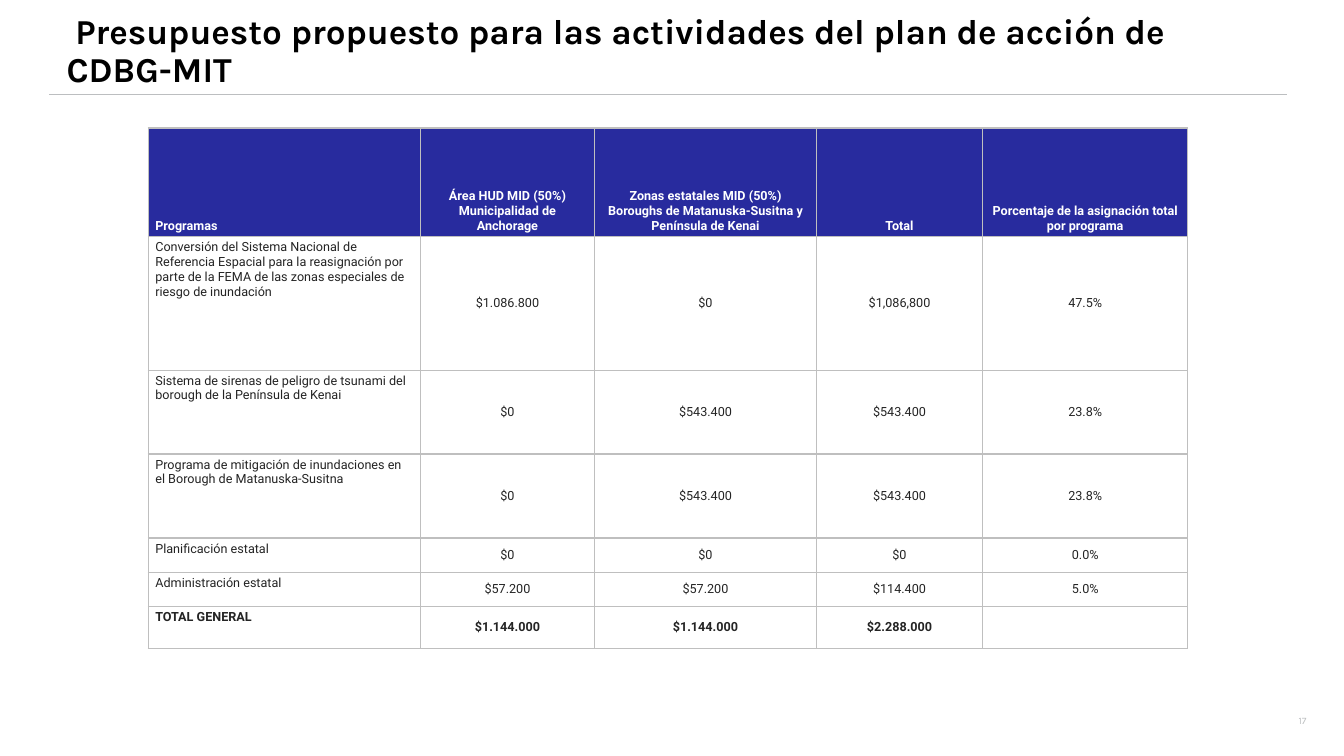
import pptx
import pptx.util
import pptx.dml.color
import pptx.enum.shapes
import pptx.enum.text
import pptx.oxml
from collections import namedtuple
from pptx.oxml.ns import nsdecls

Pt = pptx.util.Pt
Align = pptx.enum.text.PP_ALIGN
Anchor = pptx.enum.text.MSO_ANCHOR
Box = namedtuple("Box", "left top width height")


class Theme:
    head, body = "Karla", "Roboto"
    black, white, ink = "000000", "FFFFFF", "242424"
    navy, rule, edge = "282B9E", "BCBEC0", "BFBFBF"
    title, cell, small = 25, 9, 7


COLS = [194.4, 124.5, 158.4, 118.8, 146.5]
ROWS = [77.6, 95.4, 60, 60, 24.5, 24.5, 30]
DATA = [
    ["Programas", "Área HUD MID (50%) Municipalidad de Anchorage",
     "Zonas estatales MID (50%) Boroughs de Matanuska-Susitna y Península de Kenai",
     "Total", "Porcentaje de la asignación total por programa"],
    ["Conversión del Sistema Nacional de Referencia Espacial para la reasignación "
     "por parte de la FEMA de las zonas especiales de riesgo de inundación",
     "$1.086.800", "$0", "$1,086,800", "47.5%"],
    ["Sistema de sirenas de peligro de tsunami del borough de la Península de Kenai",
     "$0", "$543.400", "$543.400", "23.8%"],
    ["Programa de mitigación de inundaciones en el Borough de Matanuska-Susitna",
     "$0", "$543.400", "$543.400", "23.8%"],
    ["Planificación estatal", "$0", "$0", "$0", "0.0%"],
    ["Administración estatal", "$57.200", "$57.200", "$114.400", "5.0%"],
    ["TOTAL GENERAL", "$1.144.000", "$1.144.000", "$2.288.000", ""],
]


def color(code):
    return pptx.dml.color.RGBColor.from_string(code)


def write(frame, text, font=Theme.body, size=Theme.cell, ink=Theme.ink,
          bold=False, align=Align.LEFT, lead=None):
    frame.word_wrap = True
    para = frame.paragraphs[0]
    para.alignment = align
    if lead:
        para.line_spacing = lead
    para.font.size = Pt(size)
    if not text:
        return
    run = para.add_run()
    run.text = text
    run.font.name = font
    run.font.size = Pt(size)
    run.font.bold = bold
    run.font.color.rgb = color(ink)


def place(shape, box):
    shape.left, shape.top, shape.width, shape.height = map(Pt, box)


def add_title(slide, box):
    """Fill the title placeholder and rule a line just below it."""
    title = slide.shapes.title
    place(title, box)
    frame = title.text_frame
    frame.auto_size = pptx.enum.text.MSO_AUTO_SIZE.NONE
    frame.vertical_anchor = Anchor.MIDDLE
    frame.margin_left = frame.margin_right = 0
    frame.margin_top = frame.margin_bottom = Pt(3.6)
    write(frame, " Presupuesto propuesto para las actividades del plan de acción de CDBG-MIT",
          font=Theme.head, size=Theme.title, ink=Theme.black, bold=True, lead=0.9)
    left, low = box.left - 12.2, box.top + box.height + 0.7
    line = slide.shapes.add_connector(
        pptx.enum.shapes.MSO_CONNECTOR.STRAIGHT,
        Pt(left), Pt(low), Pt(left + 884.2), Pt(low))
    line.line.color.rgb = color(Theme.rule)
    line.line.width = Pt(0.5)
    props = line.element.spPr
    props.append(pptx.oxml.parse_xml(f"<a:effectLst {nsdecls('a')}/>"))


def add_edges(cell):
    props = cell._tc.get_or_add_tcPr()
    for i, side in enumerate(("lnL", "lnR", "lnT", "lnB")):
        props.insert(i, pptx.oxml.parse_xml(
            f'<a:{side} {nsdecls("a")} w="{Pt(1)}"><a:solidFill>'
            f'<a:srgbClr val="{Theme.edge}"/></a:solidFill></a:{side}>'))


def add_budget(slide, box):
    table = slide.shapes.add_table(len(ROWS), len(COLS), *map(Pt, box)).table
    for col, width in zip(table.columns, COLS):
        col.width = Pt(width)
    for r, (row, height) in enumerate(zip(DATA, ROWS)):
        table.rows[r].height = Pt(height)
        head, total = r == 0, r == len(ROWS) - 1
        for c, text in enumerate(row):
            cell = table.cell(r, c)
            cell.margin_left = cell.margin_right = Pt(5.2)
            cell.margin_top = cell.margin_bottom = Pt(2.4)
            cell.vertical_anchor = (
                Anchor.BOTTOM if head else Anchor.MIDDLE if c else Anchor.TOP)
            cell.fill.solid()
            cell.fill.fore_color.rgb = color(Theme.navy if head else Theme.white)
            add_edges(cell)
            write(cell.text_frame, text, bold=head or total,
                  ink=Theme.white if head else Theme.ink,
                  align=Align.CENTER if c else Align.LEFT)


def add_number(slide, box):
    frame = slide.shapes.add_textbox(*map(Pt, box)).text_frame
    frame.vertical_anchor = Anchor.MIDDLE
    write(frame, "17", font=Theme.head, size=Theme.small,
          ink=Theme.rule, align=Align.RIGHT)


def main():
    deck = pptx.Presentation()
    deck.slide_width, deck.slide_height = Pt(960), Pt(540)
    slide = deck.slides.add_slide(deck.slide_layouts[5])
    slide.background.fill.solid()
    slide.background.fill.fore_color.rgb = color(Theme.white)
    add_title(slide, Box(47.5, 7.2, 842.4, 59.8))
    add_budget(slide, Box(105.8, 91.4, sum(COLS), sum(ROWS)))
    add_number(slide, Box(750.2, 500.4, 190.1, 28.8))
    deck.save("out.pptx")


if __name__ == "__main__":
    main()
